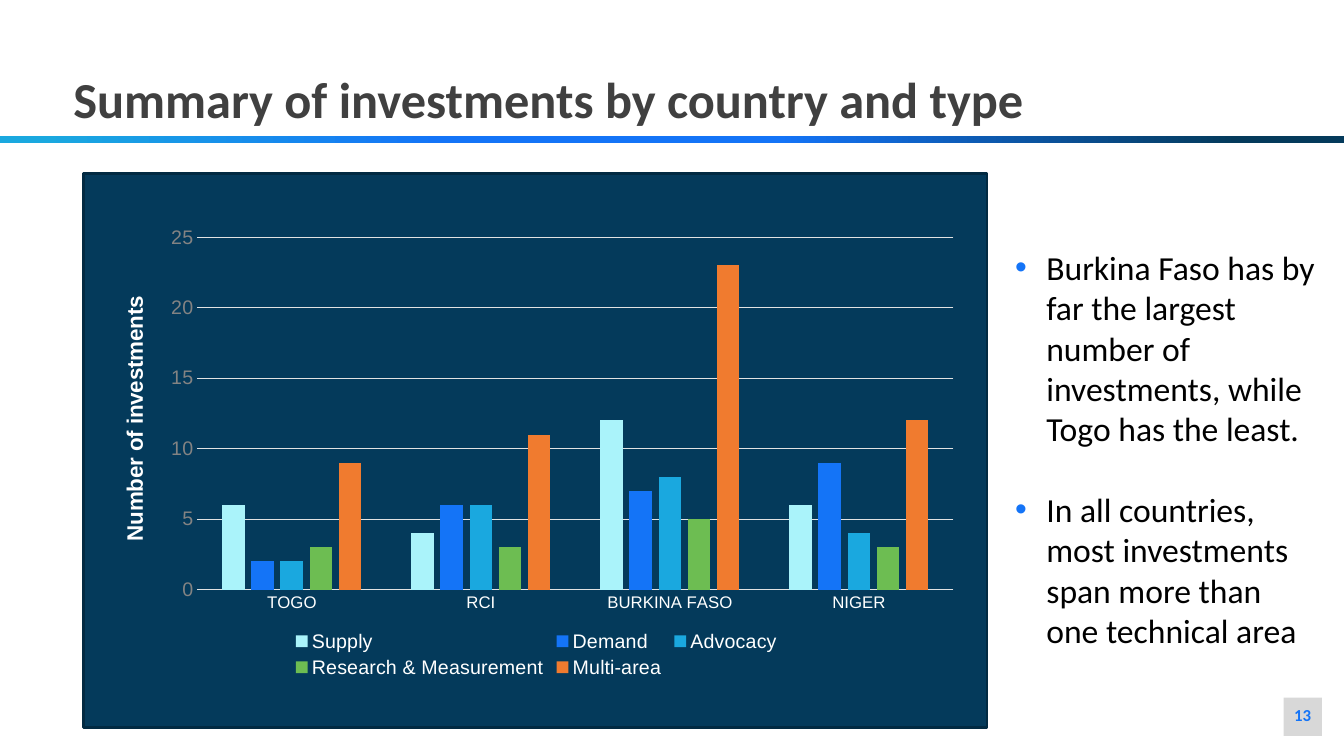
"""Build a slide that charts investments by country and type."""
import dataclasses

import lxml.etree
import pptx
import pptx.chart.data
import pptx.dml.color
import pptx.enum.chart
import pptx.enum.shapes
import pptx.enum.text
import pptx.oxml.ns
import pptx.util

PX = 9144
COLORS = {
    "navy": "043A5B", "edge": "022A42", "blue": "1474F7", "cyan": "1AA8DF",
    "ice": "AAF3FA", "green": "6DBD52", "orange": "F07B2F", "white": "FFFFFF",
    "black": "000000", "title": "404040", "tick": "838383", "grid": "E2E2E2",
    "badge": "D8D8D8",
}
COUNTRIES = ["TOGO", "RCI", "BURKINA FASO", "NIGER"]
STRIPE_STOPS = [(0, "cyan"), (3, "cyan"), (33, "blue"), (58, "blue"), (92, "navy"), (100, "navy")]
PLOT_LAYOUT = {"x": 0.11, "y": 0.04, "w": 0.87, "h": 0.76}
qn = pptx.oxml.ns.qn


@dataclasses.dataclass
class Box:
    left: int
    top: int
    width: int
    height: int

    def emu(self) -> list[int]:
        return [v * PX for v in dataclasses.astuple(self)]


@dataclasses.dataclass
class Series:
    name: str
    color: str
    values: list[int]


@dataclasses.dataclass
class Style:
    size: int
    color: str
    bold: bool = False
    name: str = "Calibri"


SERIES = [
    Series("Supply", "ice", [6, 4, 12, 6]),
    Series("Demand", "blue", [2, 6, 7, 9]),
    Series("Advocacy", "cyan", [2, 6, 8, 4]),
    Series("Research & Measurement", "green", [3, 3, 5, 3]),
    Series("Multi-area", "orange", [9, 11, 23, 12]),
]
FINDINGS = [
    "Burkina Faso has by far the largest number of investments, while Togo has the least.",
    "In all countries, most investments span more than one technical area",
]


def rgb(color: str) -> pptx.dml.color.RGBColor:
    return pptx.dml.color.RGBColor.from_string(COLORS[color])


def set_font(font, style: Style) -> None:
    font.size = pptx.util.Pt(style.size)
    font.name = style.name
    font.bold = style.bold
    font.color.rgb = rgb(style.color)


def set_line(line, color: str, width: float) -> None:
    line.color.rgb = rgb(color)
    line.width = pptx.util.Pt(width)


def add_rect(s, box: Box, fill: str):
    sp = s.shapes.add_shape(pptx.enum.shapes.MSO_SHAPE.RECTANGLE, *box.emu())
    sp.shadow.inherit = False
    sp.fill.solid()
    sp.fill.fore_color.rgb = rgb(fill)
    sp.line.fill.background()
    return sp


def add_stripe(s, box: Box) -> None:
    sp = add_rect(s, box, "blue")
    sp.fill.gradient()
    sp.fill.gradient_angle = 0
    stops = sp._element.spPr.find(".//" + qn("a:gsLst"))
    for old in list(stops):
        stops.remove(old)
    for pos, color in STRIPE_STOPS:
        gs = lxml.etree.SubElement(stops, qn("a:gs"), pos=str(pos * 1000))
        lxml.etree.SubElement(gs, qn("a:srgbClr"), val=COLORS[color])


def add_text(s, box: Box, texts: list[str], style: Style):
    tf = s.shapes.add_textbox(*box.emu()).text_frame
    tf.word_wrap = True
    for i, text in enumerate(texts):
        p = tf.add_paragraph() if i else tf.paragraphs[0]
        r = p.add_run()
        r.text = text
        set_font(r.font, style)
    return tf


def add_bullet(p, color: str) -> None:
    pPr = p._p.get_or_add_pPr()
    pPr.set("marL", str(31 * PX))
    pPr.set("indent", str(-31 * PX))
    clr = lxml.etree.SubElement(pPr, qn("a:buClr"))
    lxml.etree.SubElement(clr, qn("a:srgbClr"), val=COLORS[color])
    lxml.etree.SubElement(pPr, qn("a:buFont"), typeface="Arial")
    lxml.etree.SubElement(pPr, qn("a:buChar"), char="•")


def set_plot_layout(chart) -> None:
    area = chart._chartSpace.chart.plotArea
    layout = area.find(qn("c:layout"))
    if layout is None:
        layout = lxml.etree.Element(qn("c:layout"))
        area.insert(0, layout)
    manual = lxml.etree.SubElement(layout, qn("c:manualLayout"))
    settings = {"layoutTarget": "inner", "xMode": "edge", "yMode": "edge", **PLOT_LAYOUT}
    for tag, val in settings.items():
        lxml.etree.SubElement(manual, qn("c:" + tag), val=str(val))


def add_investment_chart(s, box: Box) -> None:
    data = pptx.chart.data.CategoryChartData()
    data.categories = COUNTRIES
    for series in SERIES:
        data.add_series(series.name, series.values)
    kind = pptx.enum.chart.XL_CHART_TYPE.COLUMN_CLUSTERED
    chart = s.shapes.add_chart(kind, *box.emu(), data).chart
    chart.has_title = False
    set_font(chart.font, Style(10, "title", name="Arial"))
    plot = chart.plots[0]
    plot.vary_by_categories = False
    plot.gap_width = 219
    plot.overlap = -27
    for drawn, series in zip(plot.series, SERIES):
        drawn.format.fill.solid()
        drawn.format.fill.fore_color.rgb = rgb(series.color)

    cat, val = chart.category_axis, chart.value_axis
    for axis, style in ((cat, Style(12, "white", name="Arial")), (val, Style(14, "tick", name="Arial"))):
        axis.major_tick_mark = pptx.enum.chart.XL_TICK_MARK.NONE
        axis.minor_tick_mark = pptx.enum.chart.XL_TICK_MARK.NONE
        set_font(axis.tick_labels.font, style)
    set_line(cat.format.line, "grid", 0.75)
    val.format.line.fill.background()
    set_line(val.major_gridlines.format.line, "grid", 0.75)
    val.minimum_scale, val.maximum_scale, val.major_unit = 0, 25, 5
    r = val.axis_title.text_frame.paragraphs[0].add_run()
    r.text = "Number of investments"
    set_font(r.font, Style(16, "white", True, "Arial"))

    chart.has_legend = True
    chart.legend.position = pptx.enum.chart.XL_LEGEND_POSITION.BOTTOM
    chart.legend.include_in_layout = False
    set_font(chart.legend.font, Style(14, "white", name="Arial"))
    set_plot_layout(chart)


def main() -> None:
    prs = pptx.Presentation()
    prs.slide_width, prs.slide_height = 1333 * PX, 750 * PX
    s = prs.slides.add_slide(prs.slide_layouts[6])

    add_rect(s, Box(1273, 692, 38, 38), "badge")
    tf = add_text(s, Box(1271, 694, 42, 30), ["13"], Style(12, "blue", True))
    tf.paragraphs[0].alignment = pptx.enum.text.PP_ALIGN.CENTER
    add_stripe(s, Box(0, 135, 1333, 7))
    title = "Summary of investments by country and type"
    tf = add_text(s, Box(63, 57, 1183, 65), [title], Style(36, "title", True))
    tf.paragraphs[0].line_spacing = 1.1

    panel = add_rect(s, Box(83, 172, 896, 550), "navy")
    set_line(panel.line, "edge", 2)
    add_investment_chart(s, Box(101, 217, 862, 460))

    tf = add_text(s, Box(997, 240, 320, 414), FINDINGS, Style(24, "black"))
    tf.paragraphs[1].space_before = pptx.util.Pt(29)
    for p in tf.paragraphs:
        add_bullet(p, "blue")
    prs.save("out.pptx")


if __name__ == "__main__":
    main()
